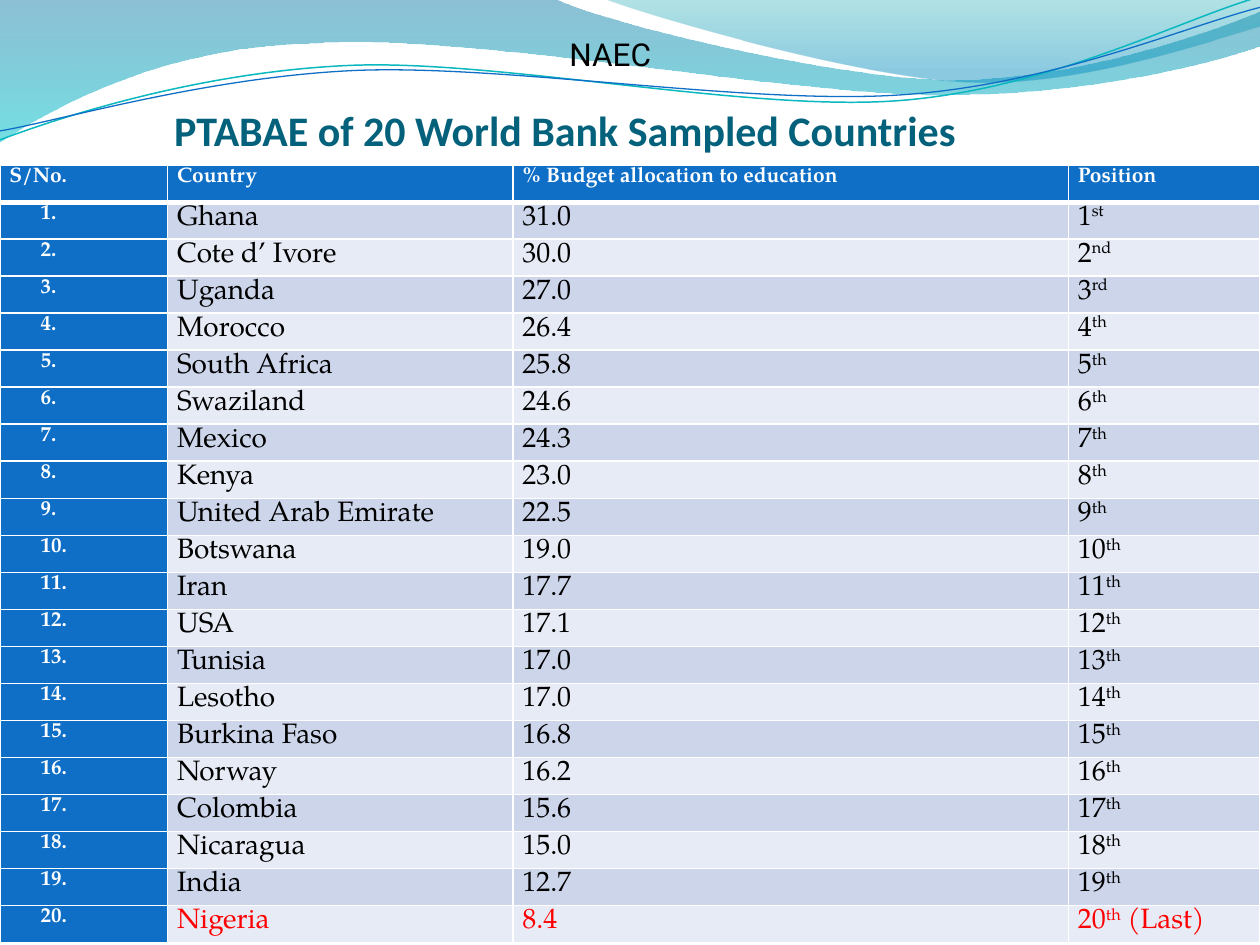
"""Build a slide ranking countries by the share of budget given to education."""
from lxml.etree import SubElement
from pptx import Presentation
from pptx.dml.color import RGBColor as Rgb
from pptx.enum.text import MSO_ANCHOR as Anchor, PP_ALIGN as Align
from pptx.oxml import parse_xml
from pptx.oxml.ns import nsdecls, qn
from pptx.util import Cm, Pt

TITLE = "PTABAE of 20 World Bank Sampled Countries"
HEADS = ["S/No.", "Country", "% Budget allocation to education", "Position"]
ROWS = [
    ("Ghana", "31.0"), ("Cote d’ Ivore", "30.0"), ("Uganda", "27.0"),
    ("Morocco", "26.4"), ("South Africa", "25.8"), ("Swaziland", "24.6"),
    ("Mexico", "24.3"), ("Kenya", "23.0"), ("United Arab Emirate", "22.5"),
    ("Botswana", "19.0"), ("Iran", "17.7"), ("USA", "17.1"),
    ("Tunisia", "17.0"), ("Lesotho", "17.0"), ("Burkina Faso", "16.8"),
    ("Norway", "16.2"), ("Colombia", "15.6"), ("Nicaragua", "15.0"),
    ("India", "12.7"), ("Nigeria", "8.4"),
]
ENDS = {1: "st", 2: "nd", 3: "rd"}
WIDTHS = [3.38, 6.96, 11.2, 3.86]
SERIF = "TeX Gyre Pagella"
BLUE, WHITE, BLACK, RED = "0F6FC6", "FFFFFF", "000000", "FF0000"
BANDS = ["CCD5EA", "E7EBF5"]

BIG = [
    (0, 0), (11.18, -0.03),
    (12.09, 0.43, 16.87, 1.6, 19.25, 1.6),
    (21.67, 1.6, 24.33, 0.66, 25.4, 0.23), (25.43, 0.91),
    (24.97, 1.12, 22.1, 1.93, 18.95, 1.91),
    (15.8, 1.91, 9.7, 0.71, 6.53, 0.86),
    (3.28, 0.91, 1.17, 2.11, -0.03, 2.87),
]
SMALL = [
    (12.17, -0.03),
    (12.93, 0.28, 17.32, 1.57, 19.53, 1.65),
    (21.74, 1.75, 24.41, 0.81, 25.4, 0.53), (25.4, 0),
]
TEAL = [
    (0, 2.82),
    (1.22, 2.36, 4.01, 1.45, 7.04, 1.32),
    (10.03, 1.19, 15.06, 2.26, 18.11, 2.03),
    (21.16, 1.8, 23.83, 0.38, 25.35, -0.05),
]
NAVY = [
    (0, 2.64),
    (1.19, 2.44, 4.17, 1.55, 7.19, 1.42),
    (10.24, 1.3, 15.16, 2.13, 18.21, 1.91),
    (21.23, 1.7, 23.9, 0.53, 25.4, 0.15),
]
FILLS = [
    (BIG, [(0, "0074A1", 45), (100, "00C6CF", 55)]),
    (SMALL, [(0, "00A1A9", 30), (80, "008BBF", 45)]),
]
LINES = [(TEAL, "0AB8BF", 0.85), (NAVY, BLUE, 0.75)]


def color(code):
    return Rgb.from_string(code)


def bend(wave, parts):
    legs = iter(list(wave._element.iter(qn("a:lnTo"))))
    for part in parts[1:]:
        leg = next(legs)
        if len(part) == 6:
            leg.tag = qn("a:cubicBezTo")
            for more in (next(legs), next(legs)):
                leg.append(more[0])
                more.getparent().remove(more)


def add_wave(shapes, parts, close):
    dots = [(round(part[i] * 100), round(part[i + 1] * 100))
            for part in parts for i in range(0, len(part), 2)]
    pen = shapes.build_freeform(*dots[0], scale=Cm(0.01))
    pen.add_line_segments(dots[1:], close=close)
    wave = pen.convert_to_shape()
    bend(wave, parts)
    wave.shadow.inherit = False
    wave.fill.background()
    return wave


def shade(wave, stops):
    marks = "".join(
        f'<a:gs pos="{at * 1000}"><a:srgbClr val="{code}">'
        f'<a:alpha val="{alpha * 1000}"/></a:srgbClr></a:gs>'
        for at, code, alpha in stops)
    props = wave._element.spPr
    props.replace(props.find(qn("a:noFill")), parse_xml(
        f'<a:gradFill {nsdecls("a")}><a:gsLst>{marks}</a:gsLst>'
        '<a:lin ang="5400000" scaled="0"/></a:gradFill>'))


def add_run(para, text, size, code, face, bold=False, lift=0):
    run = para.add_run()
    run.text = text
    font = run.font
    font.size, font.name, font.bold = Pt(size), face, bold
    font.color.rgb = color(code)
    if lift:
        font._element.set("baseline", str(lift * 1000))


def add_text(shapes, box, text, size, code, face, bold=False):
    frame = shapes.add_textbox(*map(Cm, box)).text_frame
    add_run(frame.paragraphs[0], text, size, code, face, bold)
    return frame


def edge(cell, base):
    props = cell._tc.get_or_add_tcPr()
    for spot, (side, width) in enumerate([("L", 1), ("R", 1), ("T", 1), ("B", base)]):
        line = parse_xml(f'<a:ln{side} {nsdecls("a")} w="{Pt(width)}"/>')
        fill = SubElement(line, qn("a:solidFill"))
        SubElement(fill, qn("a:srgbClr"), val=WHITE)
        props.insert(spot, line)


def fill_cell(cell, back, runs, base=1):
    cell.margin_left = cell.margin_right = Cm(0.19)
    cell.margin_top = cell.margin_bottom = 0
    cell.fill.solid()
    cell.fill.fore_color.rgb = color(back)
    edge(cell, base)
    para = cell.text_frame.paragraphs[0]
    para.alignment, para.line_spacing = Align.JUSTIFY, 1.1
    for text, size, code, bold, lift in runs:
        add_run(para, text, size, code, SERIF, bold, lift)
    return para


def add_grid(shapes):
    count = len(ROWS) + 1
    grid = shapes.add_table(count, len(HEADS), 0, Cm(3.33), Cm(25.4), Cm(15.67)).table
    for col, width in zip(grid.columns, WIDTHS):
        col.width = Cm(width)
    for col, head in enumerate(HEADS):
        fill_cell(grid.cell(0, col), BLUE, [(head, 12, WHITE, True, 0)], 3)
    for num, (land, share) in enumerate(ROWS, 1):
        last = num == len(ROWS)
        ink = RED if last else BLACK
        back = BANDS[(num - 1) % 2]
        para = fill_cell(grid.cell(num, 0), BLUE, [(f"{num}.", 12, WHITE, True, 0)])
        props = para._p.get_or_add_pPr()
        props.set("marL", str(Cm(1.27)))
        props.set("indent", str(-Cm(0.64)))
        place = [(str(num), 0), (ENDS.get(num, "th"), 30)]
        if last:
            place.append((" (Last)", 0))
        for col, bits in enumerate([[(land, 0)], [(share, 0)], place], 1):
            runs = [(text, 16, ink, False, lift) for text, lift in bits]
            fill_cell(grid.cell(num, col), back, runs)


def main():
    deck = Presentation()
    deck.slide_width, deck.slide_height = Cm(25.4), Cm(19.05)
    shapes = deck.slides.add_slide(deck.slide_layouts[6]).shapes
    for parts, stops in FILLS:
        wave = add_wave(shapes, parts, True)
        wave.line.fill.background()
        shade(wave, stops)
    for parts, code, width in LINES:
        wave = add_wave(shapes, parts, False)
        wave.line.color.rgb = color(code)
        wave.line.width = Pt(width)
    frame = add_text(shapes, (3.51, 1.96, 20.62, 1.17), TITLE, 24, "04617B", "Calibri", True)
    frame.word_wrap = True
    frame.vertical_anchor = Anchor.BOTTOM
    frame.margin_left = frame.margin_right = frame.margin_bottom = 0
    add_grid(shapes)
    add_text(shapes, (11.23, 0.58, 2.18, 1.02), "NAEC", 18, BLACK, "Roboto").word_wrap = False
    deck.save("out.pptx")


if __name__ == "__main__":
    main()
